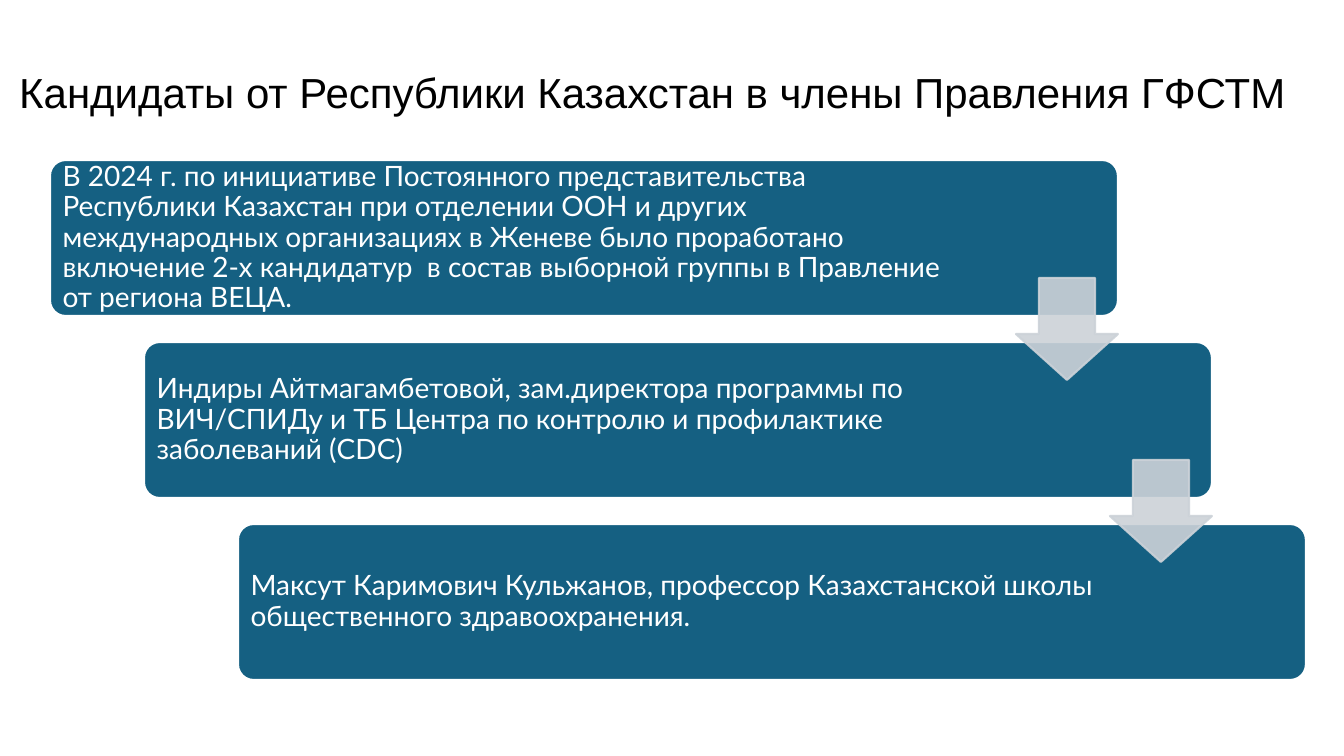
import pptx
import pptx.dml.color
import pptx.enum.shapes
import pptx.enum.text
import pptx.oxml
import pptx.oxml.ns
import pptx.util

WHITE = pptx.dml.color.RGBColor(0xFF, 0xFF, 0xFF)
BLACK = pptx.dml.color.RGBColor(0x00, 0x00, 0x00)
TEAL = pptx.dml.color.RGBColor(0x15, 0x60, 0x82)
ARROW_GREY = pptx.dml.color.RGBColor(0xCC, 0xD2, 0xD8)

SHAPES = pptx.enum.shapes.MSO_SHAPE
ALIGN = pptx.enum.text.PP_ALIGN

TITLE = "Кандидаты от Республики Казахстан в члены Правления ГФСТМ"
STEPS = [
    ("В 2024 г. по инициативе Постоянного представительства Республики Казахстан "
     "при отделении ООН и других международных организациях в Женеве было "
     "проработано включение 2-х кандидатур  в состав выборной группы в Правление "
     "от региона ВЕЦА.", 168),
    ("Индиры Айтмагамбетовой, зам.директора программы по ВИЧ/СПИДу и ТБ Центра "
     "по контролю и профилактике заболеваний (CDC)", 205),
    ("Максут Каримович Кульжанов, профессор Казахстанской школы общественного "
     "здравоохранения.", 205),
]

BOX_LEFT, BOX_TOP = 50, 160
BOX_WIDTH, BOX_HEIGHT = 1068, 156
STEP_RIGHT, STEP_DOWN = 94, 182
ARROW_RIGHT, ARROW_DOWN, ARROW_SIZE = 966, 118, 102


def px(*lengths):
    return [pptx.util.Emu(round(length * 914400 / 100.8)) for length in lengths]


class StepSlide:
    def __init__(self, presentation):
        self.slide = presentation.slides.add_slide(presentation.slide_layouts[5])

    def set_text(self, frame, text, font_name, size, color, align):
        frame.word_wrap = True
        frame.auto_size = pptx.enum.text.MSO_AUTO_SIZE.NONE
        frame.vertical_anchor = pptx.enum.text.MSO_ANCHOR.MIDDLE
        frame.text = text
        paragraph = frame.paragraphs[0]
        paragraph.alignment = align
        paragraph.line_spacing = 0.9
        paragraph.font.name = font_name
        paragraph.font.size = pptx.util.Pt(size)
        paragraph.font.color.rgb = color

    def title(self, text, left, top, width, height):
        title = self.slide.shapes.title
        title.left, title.top, title.width, title.height = px(left, top, width, height)
        self.set_text(title.text_frame, text, "Arial", 30, BLACK, ALIGN.CENTER)

    def shape(self, kind, left, top, width, height, adjustments, fill, line):
        shape = self.slide.shapes.add_shape(kind, *px(left, top, width, height))
        shape.shadow.inherit = False
        for index, value in enumerate(adjustments):
            shape.adjustments[index] = value
        shape.fill.solid()
        shape.fill.fore_color.rgb = fill
        shape.line.color.rgb = line
        shape.line.width = pptx.util.Pt(1.5)
        return shape

    def box(self, text, left, top, right_margin):
        box = self.shape(SHAPES.ROUNDED_RECTANGLE, left, top, BOX_WIDTH, BOX_HEIGHT,
                         [0.1], TEAL, WHITE)
        frame = box.text_frame
        frame.margin_left, frame.margin_right = px(8, right_margin)
        frame.margin_top, frame.margin_bottom = px(8, 8)
        self.set_text(frame, text, "Lato", 20, WHITE, ALIGN.LEFT)

    def arrow(self, left, top):
        arrow = self.shape(SHAPES.DOWN_ARROW, left, top, ARROW_SIZE, ARROW_SIZE,
                           [0.55, 0.45], ARROW_GREY, ARROW_GREY)
        for color in arrow.element.spPr.iter(pptx.oxml.ns.qn("a:srgbClr")):
            color.append(pptx.oxml.parse_xml(
                f'<a:alpha {pptx.oxml.ns.nsdecls("a")} val="90000"/>'))


def main():
    presentation = pptx.Presentation()
    presentation.slide_width, presentation.slide_height = px(1344, 756)
    page = StepSlide(presentation)
    page.title(TITLE, 0, 40, 1306, 110)
    corners = [(BOX_LEFT + STEP_RIGHT * index, BOX_TOP + STEP_DOWN * index)
               for index in range(len(STEPS))]
    for (left, top), (text, right_margin) in zip(corners, STEPS):
        page.box(text, left, top, right_margin)
    for left, top in corners[:-1]:
        page.arrow(left + ARROW_RIGHT, top + ARROW_DOWN)
    presentation.save("out.pptx")


if __name__ == "__main__":
    main()
